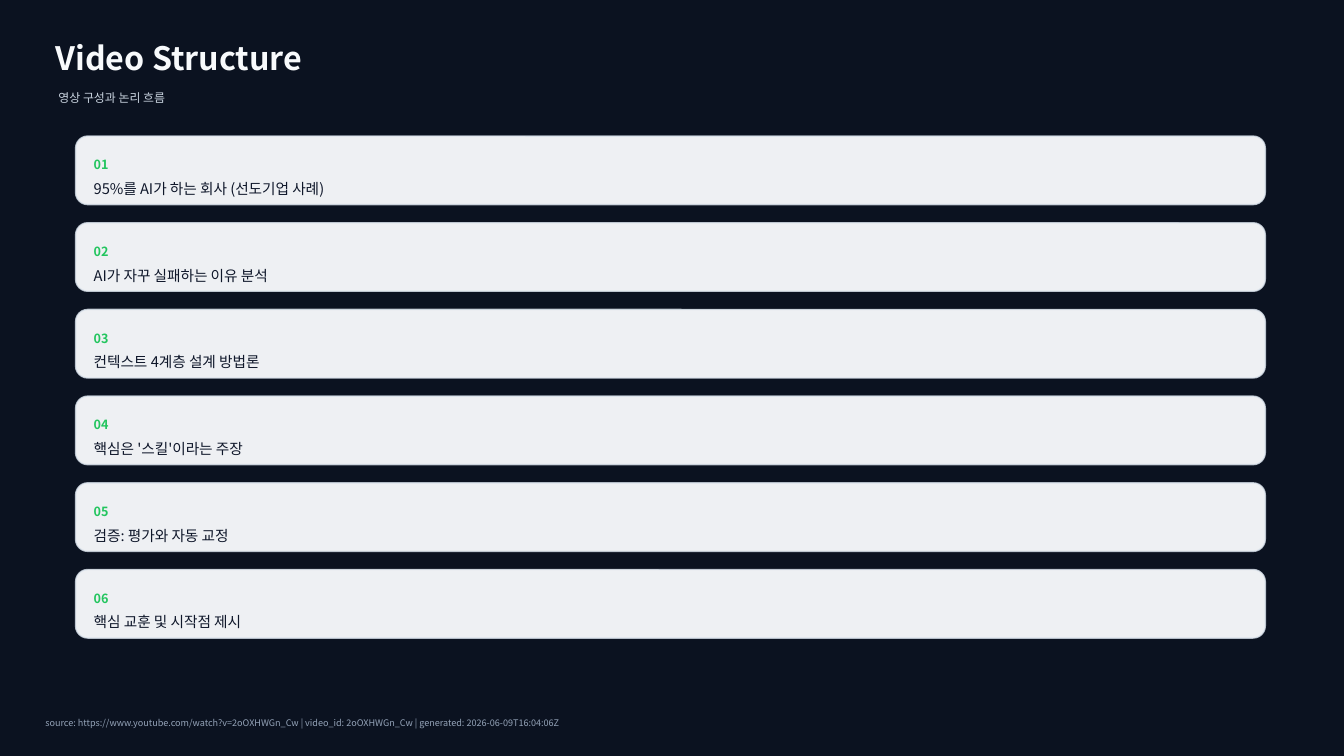
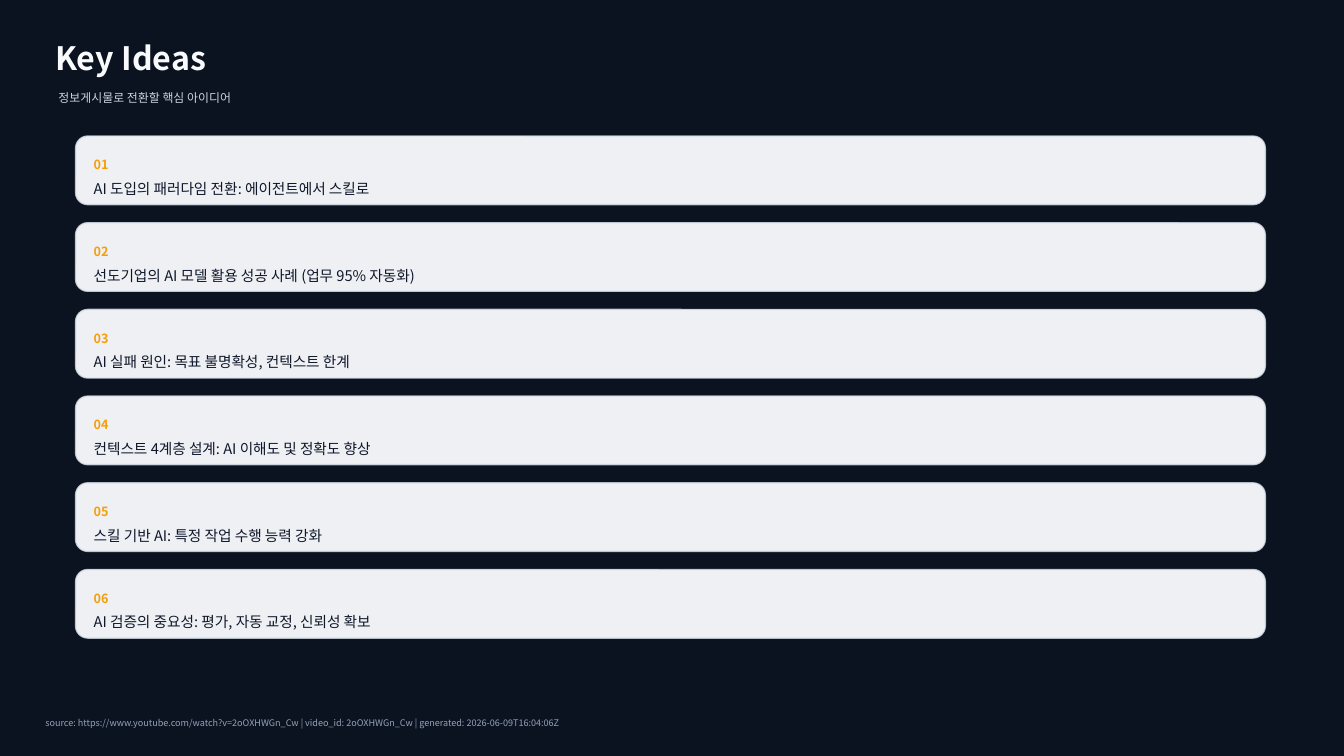
from lxml import etree
from pptx import Presentation
from pptx.dml.color import RGBColor
from pptx.enum.shapes import MSO_SHAPE
from pptx.enum.text import MSO_ANCHOR
from pptx.oxml.ns import qn
from pptx.util import Inches, Pt

ROUNDED = MSO_SHAPE.ROUNDED_RECTANGLE
MIDDLE = MSO_ANCHOR.MIDDLE

# Colours
NAVY = RGBColor(0x0B, 0x12, 0x20)
INK = RGBColor(0x0F, 0x17, 0x2A)
WHITE = RGBColor(0xF8, 0xFA, 0xFC)
PALE = RGBColor(0xCB, 0xD5, 0xE1)
SLATE = RGBColor(0x94, 0xA3, 0xB8)
BORDER = RGBColor(0xD7, 0xE0, 0xEA)
GREEN = RGBColor(0x22, 0xC5, 0x5E)
AMBER = RGBColor(0xF5, 0x9E, 0x0B)

# Text formats
FONT = "Noto Sans CJK KR"
TITLE = {"size": Pt(23), "bold": True}
SUBTITLE = {"size": Pt(8.5)}
NUMBER = {"size": Pt(9), "bold": True}
BODY = {"size": Pt(10.5)}
FOOTER = {"size": Pt(6.5)}

# Card list layout, in inches
CARD_X, CARD_Y, CARD_W, CARD_H = 0.75, 1.35, 11.8, 0.68
CARD_PITCH = 0.86
CARD_PAD = 0.18
CARD_RADIUS = 0.12

SOURCE = ("source: https://www.youtube.com/watch?v=2oOXHWGn_Cw | "
          "video_id: 2oOXHWGn_Cw | generated: 2026-06-09T16:04:06Z")

SLIDES = [
    ("Video Structure", "영상 구성과 논리 흐름", GREEN, [
        "95%를 AI가 하는 회사 (선도기업 사례)",
        "AI가 자꾸 실패하는 이유 분석",
        "컨텍스트 4계층 설계 방법론",
        "핵심은 '스킬'이라는 주장",
        "검증: 평가와 자동 교정",
        "핵심 교훈 및 시작점 제시",
    ]),
    ("Key Ideas", "정보게시물로 전환할 핵심 아이디어", AMBER, [
        "AI 도입의 패러다임 전환: 에이전트에서 스킬로",
        "선도기업의 AI 모델 활용 성공 사례 (업무 95% 자동화)",
        "AI 실패 원인: 목표 불명확성, 컨텍스트 한계",
        "컨텍스트 4계층 설계: AI 이해도 및 정확도 향상",
        "스킬 기반 AI: 특정 작업 수행 능력 강화",
        "AI 검증의 중요성: 평가, 자동 교정, 신뢰성 확보",
    ]),
]


def set_alpha(fill_parent, percent):
    """Make the solid fill below an element partly transparent."""
    color = fill_parent.find(qn("a:solidFill"))[0]
    etree.SubElement(color, qn("a:alpha")).set("val", str(percent * 1000))


def add_text(s, box, text, style, color):
    tf = s.shapes.add_textbox(*map(Inches, box)).text_frame
    frame_format = {"word_wrap": True, "vertical_anchor": MIDDLE,
                    "margin_left": 0, "margin_right": 0,
                    "margin_top": 0, "margin_bottom": 0}
    for name, value in frame_format.items():
        setattr(tf, name, value)
    r = tf.paragraphs[0].add_run()
    r.text = text
    for name, value in {"name": FONT, **style}.items():
        setattr(r.font, name, value)
    r.font.color.rgb = color
    # East Asian typeface for the Korean characters
    etree.SubElement(r._r.get_or_add_rPr(), qn("a:ea")).set("typeface", FONT)


def add_card(s, index, text, accent):
    y = CARD_Y + index * CARD_PITCH
    box = (CARD_X, y, CARD_W, CARD_H)
    sp = s.shapes.add_shape(ROUNDED, *map(Inches, box))
    sp.adjustments[0] = CARD_RADIUS / CARD_H
    sp.shadow.inherit = False
    sp.fill.solid()
    sp.fill.fore_color.rgb = WHITE
    sp.line.color.rgb = BORDER
    sp.line.width = Pt(1)
    set_alpha(sp._element.spPr, 96)
    set_alpha(sp._element.spPr.find(qn("a:ln")), 80)

    x, w = CARD_X + CARD_PAD, CARD_W - 2 * CARD_PAD
    add_text(s, (x, y + 0.16, w, 0.25), f"{index + 1:02d}", NUMBER, accent)
    add_text(s, (x, y + 0.5, w, 0.04), text, BODY, INK)


def add_list_slide(prs, title, subtitle, accent, items):
    s = prs.slides.add_slide(prs.slide_layouts[6])
    s.background.fill.solid()
    s.background.fill.fore_color.rgb = NAVY
    # Heading
    add_text(s, (0.55, 0.35, 12, 0.45), title, TITLE, WHITE)
    add_text(s, (0.58, 0.83, 11.5, 0.28), subtitle, SUBTITLE, PALE)
    # Numbered cards
    for index, text in enumerate(items):
        add_card(s, index, text, accent)
    # Footer
    add_text(s, (0.45, 7.05, 12.4, 0.25), SOURCE, FOOTER, SLATE)


def main():
    prs = Presentation()
    prs.slide_width, prs.slide_height = Inches(13.33), Inches(7.5)
    for content in SLIDES:
        add_list_slide(prs, *content)
    prs.save("out.pptx")


if __name__ == "__main__":
    main()
